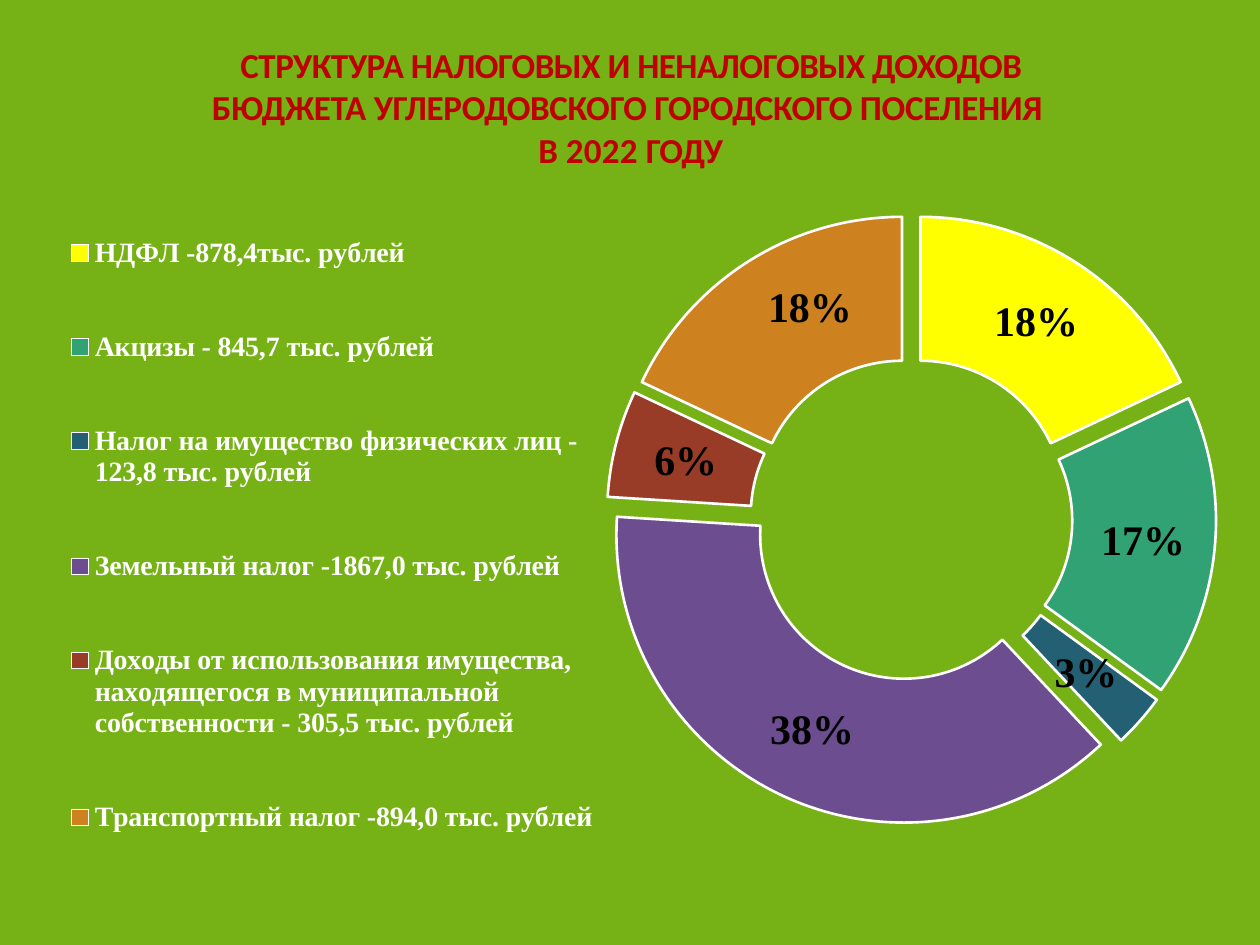
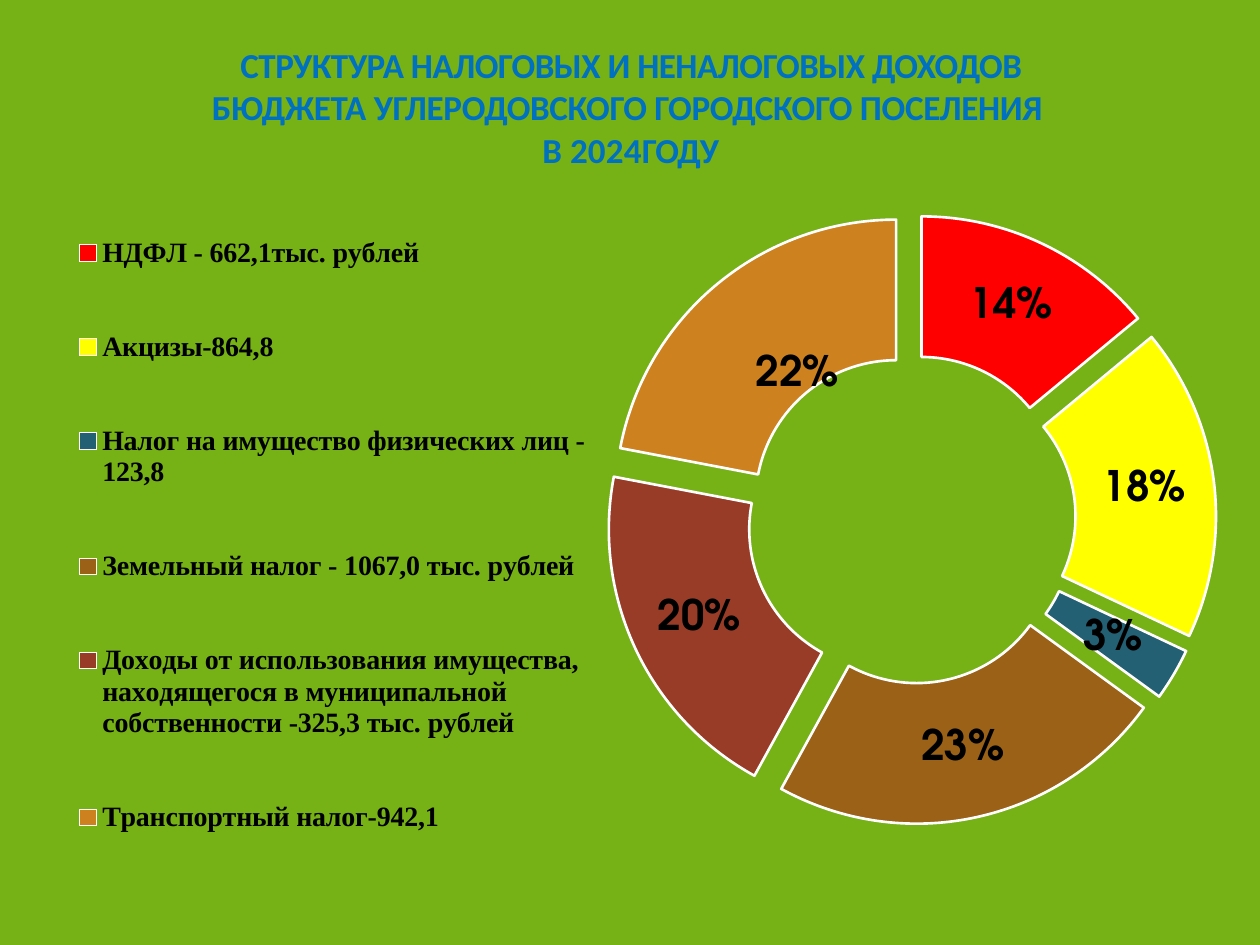
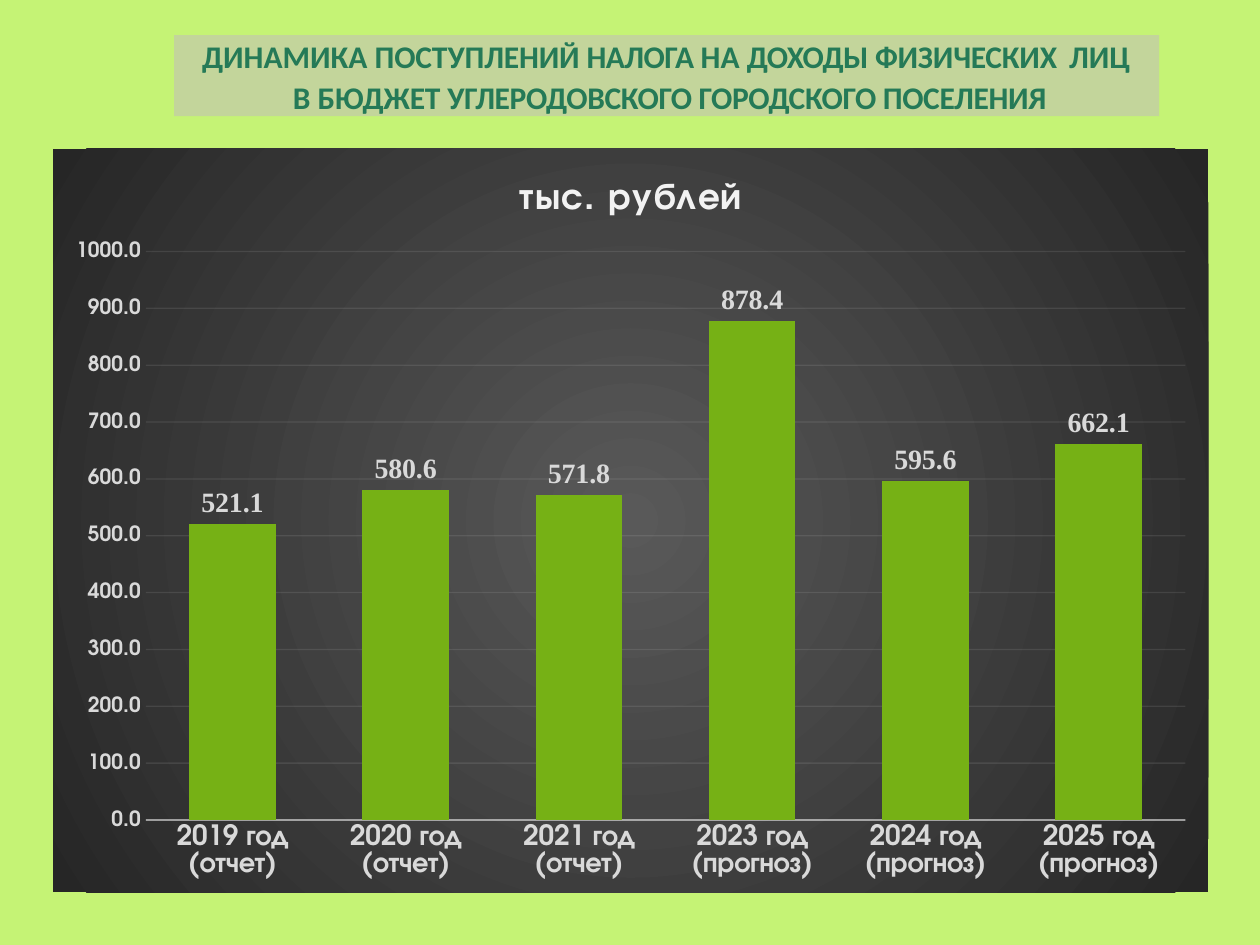
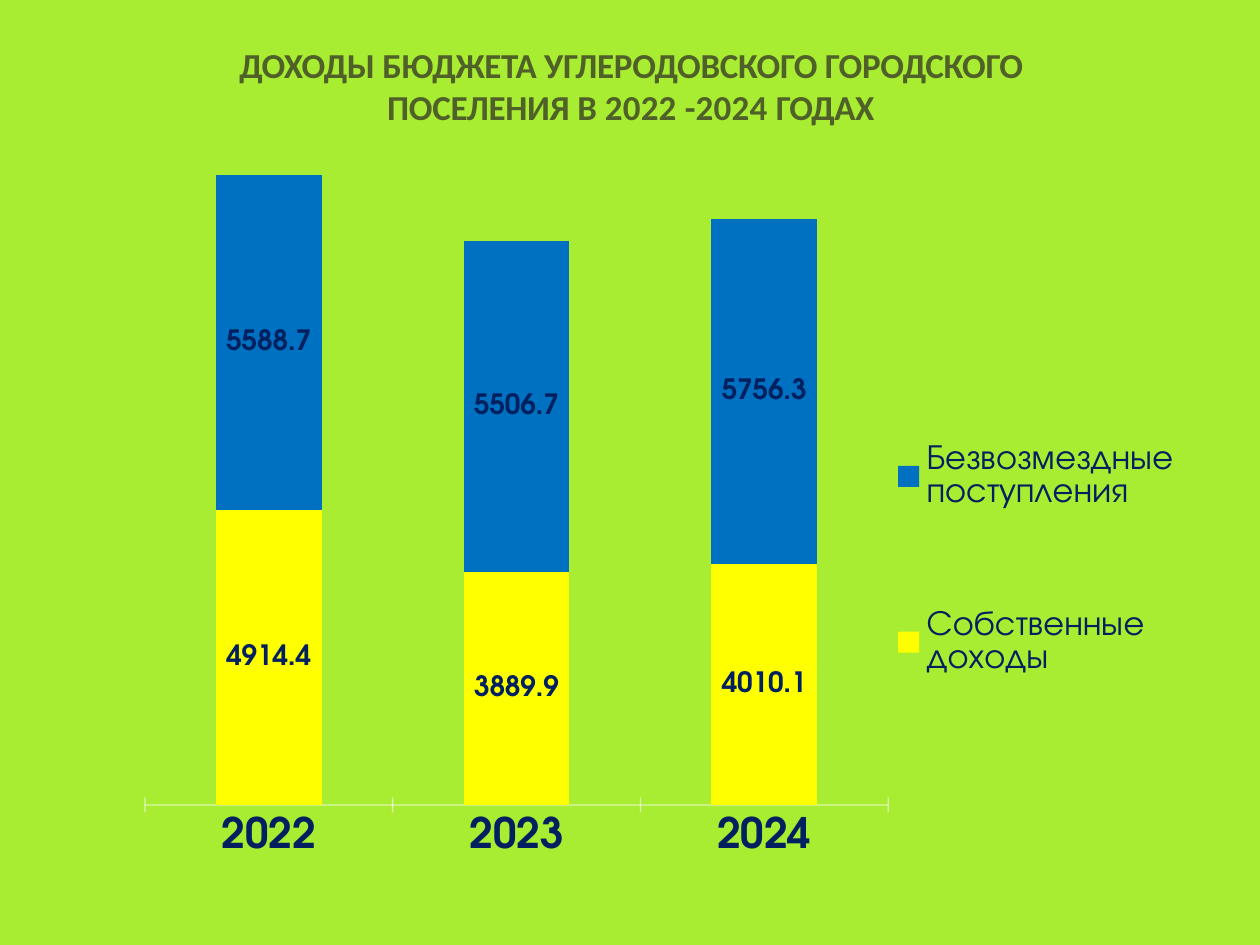
from lxml import etree
from pptx import Presentation
from pptx.chart.data import CategoryChartData as Data
from pptx.dml.color import RGBColor as RGB
from pptx.enum.chart import XL_CHART_TYPE as Kind
from pptx.enum.chart import XL_LABEL_POSITION as Spot
from pptx.enum.chart import XL_LEGEND_POSITION as Side
from pptx.enum.chart import XL_TICK_LABEL_POSITION as Ticks
from pptx.enum.chart import XL_TICK_MARK as Mark
from pptx.enum.shapes import MSO_SHAPE as Shape
from pptx.enum.text import MSO_ANCHOR as Anchor
from pptx.enum.text import MSO_AUTO_SIZE as Auto
from pptx.enum.text import PP_ALIGN as Align
from pptx.oxml import parse_xml
from pptx.oxml.ns import nsdecls, qn
from pptx.util import Cm, Pt

WIDE, HIGH = 25.4, 19.05
HEAD, BODY, SERIF = "Calibri", "TeX Gyre Adventor", "Times New Roman"
COLORS = {
    "leaf": "76B115", "lime": "C5F375", "bright": "A8ED31",
    "olive": "C3D59B", "moss": "4F6128", "pine": "257A57",
    "crimson": "C00000", "blue": "0070C0", "navy": "002060",
    "white": "FFFFFF", "black": "000000", "pale": "F2F2F2", "grey": "D9D9D9",
    "smoke": "595959", "coal": "262626",
    "yellow": "FFFF00", "red": "FF0000", "jade": "31A274", "teal": "236073",
    "plum": "6C4D90", "brown": "9A6117", "rust": "983C27", "orange": "CD811F",
}
TITLE_BOX = (3.48, 0.84, 18.47, 2.64)
RING_BOX = (0.84, 3.45, 23.7, 14.76)
RING_HEAD = [("СТРУКТУРА НАЛОГОВЫХ И НЕНАЛОГОВЫХ ДОХОДОВ ", -0.3),
             ("БЮДЖЕТА УГЛЕРОДОВСКОГО ГОРОДСКОГО ПОСЕЛЕНИЯ ", -0.2)]


def color(name):
    return RGB.from_string(COLORS[name])


def style(font, size, tint, bold=False, face=BODY):
    font.name, font.size, font.bold = face, Pt(size), bold
    font.color.rgb = color(tint)


def paint(fill, tint):
    fill.solid()
    fill.fore_color.rgb = color(tint)


def stroke(line, tint, width, alpha):
    line.width = Pt(width)
    paint(line.fill, tint)
    tone = line._ln.find(".//" + qn("a:srgbClr"))
    etree.SubElement(tone, qn("a:alpha")).set("val", str(alpha * 1000))


def place(box):
    return [Cm(part) for part in box]


def new_slide(deck, tint):
    slide = deck.slides.add_slide(deck.slide_layouts[5])
    back = slide.shapes.add_shape(Shape.RECTANGLE, *place((0, 0, WIDE, HIGH)))
    back.shadow.inherit = False
    paint(back.fill, tint)
    back.line.fill.background()
    slide.shapes._spTree.insert(2, back._element)
    return slide


def add_title(slide, box, lines, size, tint):
    title = slide.shapes.title
    title.left, title.top, title.width, title.height = place(box)
    frame = title.text_frame
    frame.auto_size, frame.word_wrap = Auto.NONE, True
    frame.vertical_anchor = Anchor.TOP
    frame.margin_left = frame.margin_right = frame.margin_bottom = 0
    frame.margin_top = Cm(0.03)
    for row, parts in enumerate(lines):
        para = frame.add_paragraph() if row else frame.paragraphs[0]
        para.alignment = Align.CENTER
        if row:
            para.space_before = Pt(1)
        for text, gap in parts:
            run = para.add_run()
            run.text = text
            style(run.font, size, tint, True, HEAD)
            run._r.get_or_add_rPr().set("spc", str(round(gap * 100)))
    return title


def layout(area):
    names = ["xMode", "yMode"] + list("xywh")
    values = ["edge", "edge"] + list(area)
    if len(area) == 2:
        names, values = list("xy"), area
    else:
        names, values = ["layoutTarget"] + names, ["inner"] + values
    items = "".join(f'<c:{n} val="{v}"/>' for n, v in zip(names, values))
    return parse_xml(f'<c:layout {nsdecls("c")}><c:manualLayout>{items}'
                     '</c:manualLayout></c:layout>')


def fix_plot(chart, area):
    plot = chart._chartSpace.find(".//" + qn("c:plotArea"))
    for old in plot.findall(qn("c:layout")):
        plot.remove(old)
    plot.insert(0, layout(area))


def add_legend(chart, side, area, size, tint, bold, face):
    chart.has_legend = True
    legend = chart.legend
    legend.position = side
    legend.include_in_layout = False
    style(legend.font, size, tint, bold, face)
    frame = layout(area)
    target = frame.find(".//" + qn("c:layoutTarget"))
    target.getparent().remove(target)
    legend._element.find(qn("c:legendPos")).addnext(frame)


def add_chart(slide, box, kind, cats, rows):
    data = Data(number_format="0.0")
    data.categories = cats
    for name, values in rows:
        data.add_series(name, values)
    chart = slide.shapes.add_chart(kind, *place(box), data).chart
    chart.has_title = chart.has_legend = False
    style(chart.font, 10, "white")
    return chart


def add_values(series, size, tint, face=BODY):
    labels = series.data_labels
    labels.show_value = True
    labels.number_format, labels.number_format_is_linked = "0.0", False
    style(labels.font, size, tint, True, face)
    return labels


def shift_label(point, ser, shift, face):
    style(point.data_label.font, 24, "black", True, face)
    label = ser.find(".//" + qn("c:dLbl"))
    label.find(qn("c:idx")).addnext(layout(shift))
    label.find(qn("c:showVal")).set("val", "0")
    label.find(qn("c:showPercent")).set("val", "1")


def ring_chart(slide, box, cats, values, tints, burst, shift, ink, face):
    chart = add_chart(slide, box, Kind.DOUGHNUT_EXPLODED, cats,
                      [("Series 1", values)])
    fix_plot(chart, (0.481, 0.029, 0.519, 0.893))
    add_legend(chart, Side.BOTTOM, (0.015, 0.005, 0.465, 0.985),
               16, ink, True, SERIF)
    plot = chart.plots[0]
    plot.vary_by_categories = True
    plot._element.find(qn("c:holeSize")).set("val", "61")
    series = plot.series[0]
    ser = series._element
    for spot, tint in enumerate(tints):
        form = series.points[spot].format
        paint(form.fill, tint)
        form.line.width = Pt(1.5)
        paint(form.line.fill, "white")
    for old in ser.findall(qn("c:explosion")):
        ser.remove(old)
    ser.find(qn("c:dPt")).addprevious(
        parse_xml(f'<c:explosion {nsdecls("c")} val="{burst}"/>'))
    labels = series.data_labels
    labels.show_percentage, labels.show_value = True, False
    labels.number_format, labels.number_format_is_linked = "0%", False
    style(labels.font, 24, "black", True, face)
    shift_label(series.points[5], ser, shift, face)


def ring_slide(deck, tint, year, *ring):
    slide = new_slide(deck, "leaf")
    tail = [("В ", 0), (year, 0.1), ("ГОДУ", -0.4)]
    add_title(slide, TITLE_BOX, [RING_HEAD, tail], 20, tint)
    ring_chart(slide, RING_BOX, *ring)


def shade(chart):
    stops = "".join(
        f'<a:gs pos="{pos}"><a:srgbClr val="{COLORS[tint]}"/></a:gs>'
        for pos, tint in ((0, "smoke"), (100000, "coal")))
    area = parse_xml(
        f'<c:spPr {nsdecls("c", "a")}><a:gradFill><a:gsLst>{stops}</a:gsLst>'
        '<a:path path="circle"><a:fillToRect l="50000" t="50000" r="50000" '
        'b="50000"/></a:path></a:gradFill><a:ln><a:noFill/></a:ln></c:spPr>')
    chart._chartSpace.find(qn("c:chart")).addnext(area)


def trend_chart(slide, box):
    name = "тыс. рублей"
    cats = [f"{year} год ({'отчет' if year < 2022 else 'прогноз'})"
            for year in (2019, 2020, 2021, 2023, 2024, 2025)]
    chart = add_chart(slide, box, Kind.COLUMN_CLUSTERED, cats,
                      [(name, (521.1, 580.6, 571.8, 878.4, 595.6, 662.1))])
    shade(chart)
    chart.has_title = True
    run = chart.chart_title.text_frame.paragraphs[0].add_run()
    run.text = name
    style(run.font, 21.3, "pale", True)
    run._r.get_or_add_rPr().set("spc", "100")
    plot = chart.plots[0]
    plot.vary_by_categories = False
    plot.gap_width, plot.overlap = 100, -24
    series = plot.series[0]
    paint(series.format.fill, "leaf")
    add_values(series, 16, "grey", SERIF).position = Spot.OUTSIDE_END
    base, scale = chart.category_axis, chart.value_axis
    for axis, size in ((base, 16), (scale, 12)):
        axis.major_tick_mark = axis.minor_tick_mark = Mark.NONE
        style(axis.tick_labels.font, size, "grey", True)
    stroke(base.format.line, "pale", 1, 54)
    scale.format.line.fill.background()
    scale.minimum_scale, scale.maximum_scale, scale.major_unit = 0, 1000, 100
    scale.tick_labels.number_format = "0.0"
    scale.tick_labels.number_format_is_linked = False
    scale.has_major_gridlines = True
    stroke(scale.major_gridlines.format.line, "pale", 0.75, 10)


def trend_slide(deck):
    slide = new_slide(deck, "lime")
    lines = [
        [("ДИНАМИКА ", 0), ("ПОСТУПЛЕНИЙ ", -0.1), ("НАЛОГА ", -0.3),
         ("НА ", 0), ("ДОХОДЫ ", -0.3), ("ФИЗИЧЕСКИХ\t", -0.1), ("ЛИЦ ", 0)],
        [("В ", 0), ("БЮДЖЕТ ", -0.1),
         ("УГЛЕРОДОВСКОГО ГОРОДСКОГО ПОСЕЛЕНИЯ", -0.2)],
    ]
    title = add_title(slide, (3.51, 0.71, 19.86, 1.63), lines, 18, "pine")
    paint(title.fill, "olive")
    for para in title.text_frame.paragraphs:
        para.line_spacing = 1.02
        props = para._p.get_or_add_pPr()
        props.set("marL", str(Cm(4.9)))
        props.set("indent", str(Cm(-4.78)))
        tabs = etree.SubElement(props, qn("a:tabLst"))
        etree.SubElement(tabs, qn("a:tab"), pos=str(Cm(17.98)), algn="l")
    trend_chart(slide, (1.07, 3, 23.29, 14.99))


def stack_chart(slide, box):
    rows = [("Собственные доходы", (4914.4, 3889.9, 4010.1)),
            ("Безвозмездные поступления", (5588.7, 5506.7, 5756.3))]
    chart = add_chart(slide, box, Kind.COLUMN_STACKED,
                      ["2022", "2023", "2024"], rows)
    fix_plot(chart, (0.046, 0.046, 0.675, 0.854))
    add_legend(chart, Side.RIGHT, (0.72, 0.28, 0.27, 0.58),
               20, "navy", False, BODY)
    plot = chart.plots[0]
    plot.vary_by_categories = False
    plot.gap_width, plot.overlap = 134, 100
    for series, tint in zip(plot.series, ("yellow", "blue")):
        paint(series.format.fill, tint)
        add_values(series, 16, "navy")
    base, scale = chart.category_axis, chart.value_axis
    base.major_tick_mark = Mark.CROSS
    base.tick_label_position = Ticks.LOW
    style(base.tick_labels.font, 24, "navy", True)
    stroke(base.format.line, "white", 0.75, 60)
    scale.minimum_scale, scale.maximum_scale = 0, 10600
    scale.has_major_gridlines = False
    scale.visible = False


def stack_slide(deck):
    slide = new_slide(deck, "bright")
    line = [("ДОХОДЫ ", -0.3),
            ("БЮДЖЕТА УГЛЕРОДОВСКОГО ГОРОДСКОГО ПОСЕЛЕНИЯ ", -0.2),
            ("В ", 0), ("2022 -2024 ", 0.1), ("ГОДАХ", -0.4)]
    add_title(slide, (*TITLE_BOX[:3], 1.75), [line], 20, "moss")
    stack_chart(slide, (1.9, 2.72, 22.2, 15.01))


def main():
    deck = Presentation()
    deck.slide_width, deck.slide_height = Cm(WIDE), Cm(HIGH)
    ring_slide(
        deck, "crimson", "2022 ",
        ["НДФЛ -878,4тыс. рублей", "Акцизы - 845,7 тыс. рублей",
         "Налог на имущество физических лиц - 123,8 тыс. рублей",
         "Земельный налог -1867,0 тыс. рублей",
         "Доходы от использования имущества, находящегося в муниципальной "
         "собственности - 305,5 тыс. рублей",
         "Транспортный налог -894,0 тыс. рублей"],
        (18, 17, 3, 38, 6, 18),
        ("yellow", "jade", "teal", "plum", "rust", "orange"),
        12, (0.02, -0.02), "white", SERIF)
    ring_slide(
        deck, "blue", "2024",
        ["НДФЛ - 662,1тыс. рублей", "Акцизы-864,8",
         "Налог на имущество физических лиц - 123,8",
         "Земельный налог - 1067,0 тыс. рублей",
         "Доходы от использования имущества, находящегося в муниципальной "
         "собственности -325,3 тыс. рублей",
         "Транспортный налог-942,1"],
        (14, 18, 3, 23, 20, 22),
        ("red", "yellow", "teal", "brown", "rust", "orange"),
        17, (0.03, 0.05), "black", BODY)
    trend_slide(deck)
    stack_slide(deck)
    deck.save("out.pptx")


if __name__ == "__main__":
    main()
